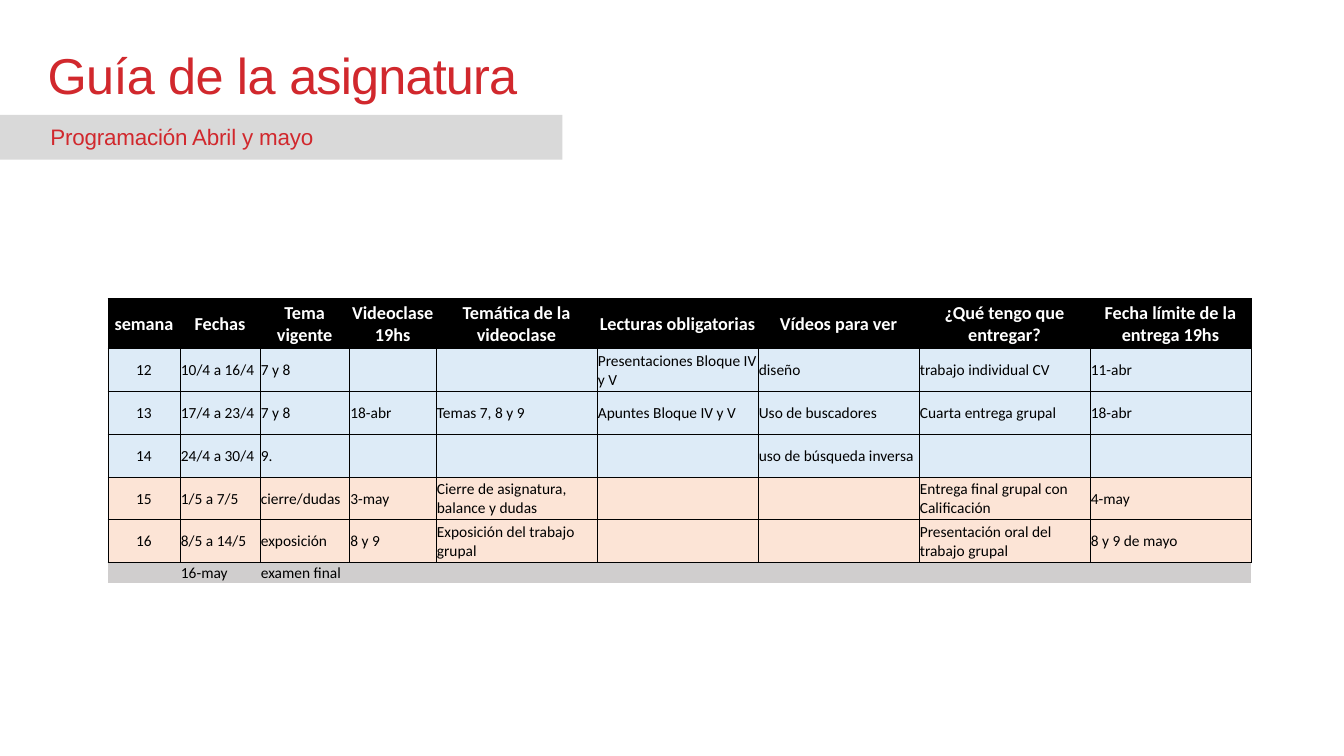
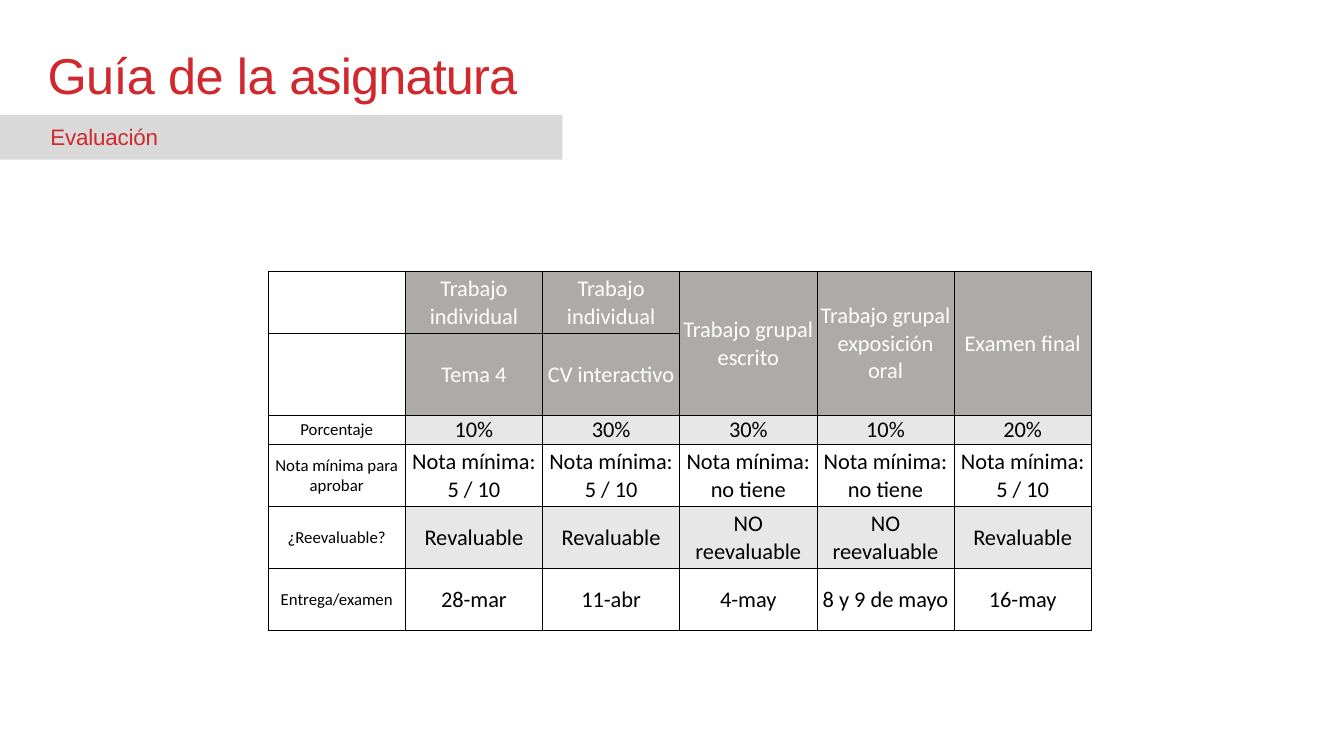
from lxml.etree import SubElement
from pptx import Presentation
from pptx.dml.color import RGBColor
from pptx.enum.shapes import MSO_SHAPE
from pptx.enum.text import MSO_ANCHOR, MSO_AUTO_SIZE, PP_ALIGN
from pptx.oxml.ns import qn
from pptx.util import Inches, Pt

COLORS = {
    "accent": "D1282D", "band": "D9D9D9", "black": "000000", "white": "FFFFFF",
    "blue": "DDEBF7", "peach": "FCE4D6", "closing": "D0CECE",
    "heading": "AEAAAA", "stripe": "E7E7E7",
}


class Deck:
    """Course guide style and current slide; lengths are percentages of the slide."""

    def __init__(self):
        self.presentation = Presentation()
        self.presentation.slide_width = Inches(13.33)
        self.presentation.slide_height = Inches(7.5)
        self.slide = None

    def across(self, share):
        return round(self.presentation.slide_width * share / 100)

    def down(self, share):
        return round(self.presentation.slide_height * share / 100)

    def box(self, left, top, width, height):
        return self.across(left), self.down(top), self.across(width), self.down(height)

    def add_run(self, paragraph, text, size, color, font="Calibri", bold=False, spacing=0):
        run = paragraph.add_run()
        run.text = text
        run.font.name = font
        run.font.size = Pt(size)
        run.font.bold = bold
        run.font.color.rgb = RGBColor.from_string(COLORS[color])
        if spacing:
            run._r.get_or_add_rPr().set("spc", str(round(spacing * 100)))

    def add_text(self, place, runs, size, anchor, space_before):
        frame = self.slide.shapes.add_textbox(*self.box(*place)).text_frame
        frame.word_wrap = True
        frame.auto_size = MSO_AUTO_SIZE.SHAPE_TO_FIT_TEXT
        frame.vertical_anchor = anchor
        frame.margin_left = frame.margin_right = frame.margin_bottom = 0
        frame.margin_top = Pt(1)
        paragraph = frame.paragraphs[0]
        paragraph.space_before = Pt(space_before)
        for text, spacing in runs:
            self.add_run(paragraph, text, size, "accent", "Arial", spacing=spacing)

    def add_band(self):
        band = self.slide.shapes.add_shape(MSO_SHAPE.RECTANGLE, *self.box(0, 15.2, 41.85, 5.93))
        band.shadow.inherit = False
        band.fill.solid()
        band.fill.fore_color.rgb = RGBColor.from_string(COLORS["band"])
        band.line.fill.background()

    def add_slide(self, subtitle, subtitle_width):
        self.slide = self.presentation.slides.add_slide(self.presentation.slide_layouts[6])
        title = [("Guía ", -0.5), ("de la ", -0.3), ("asignatura", -0.6)]
        self.add_text((3.55, 5.6, 37.2, 8.27), title, 36, MSO_ANCHOR.MIDDLE, 1)
        self.add_band()
        self.add_text((3.75, 16.1, subtitle_width, 3.73), [(subtitle, -0.1)], 16, MSO_ANCHOR.TOP, 0.9)

    def add_table(self, left, top, columns, rows, texts, style, merges=(), outer=0.5, open_last=False):
        place = self.box(left, top, sum(columns), sum(rows))
        table = self.slide.shapes.add_table(len(rows), len(columns), *place).table
        table.first_row = table.horz_banding = False
        for column, share in zip(table.columns, columns):
            column.width = self.across(share)
        for row, share in zip(table.rows, rows):
            row.height = self.down(share)
        for first, last in merges:
            table.cell(*first).merge(table.cell(*last))
        bottom, right = len(rows) - 1, len(columns) - 1
        for row, line in enumerate(texts):
            for column, text in enumerate(line):
                cell = table.cell(row, column)
                edges = {"L": column == 0, "R": column == right, "T": row == 0, "B": row == bottom}
                widths = {side: outer if edge else 0.5 for side, edge in edges.items()}
                if open_last and row == bottom:
                    widths.update(L=0, R=0, B=0)
                if cell.is_spanned:
                    widths["T"] = 0
                self.set_borders(cell, widths)
                self.fill_cell(cell, text, *style(row, column))

    def set_borders(self, cell, widths):
        properties = cell._tc.get_or_add_tcPr()
        for side, width in widths.items():
            line = SubElement(properties, qn(f"a:ln{side}"), w=str(Pt(width)))
            if width:
                SubElement(SubElement(line, qn("a:solidFill")), qn("a:srgbClr"), val=COLORS["black"])
            else:
                SubElement(line, qn("a:noFill"))

    def fill_cell(self, cell, text, fill, size, color, bold, align):
        if fill:
            cell.fill.solid()
            cell.fill.fore_color.rgb = RGBColor.from_string(COLORS[fill])
        else:
            cell.fill.background()
        cell.margin_left = cell.margin_right = cell.margin_top = Pt(0.7)
        cell.margin_bottom = 0
        cell.vertical_anchor = MSO_ANCHOR.MIDDLE
        paragraph = cell.text_frame.paragraphs[0]
        paragraph.alignment = align
        if text:
            self.add_run(paragraph, text, size, color, bold=bold)
        else:
            SubElement(paragraph._p, qn("a:endParaRPr"), sz=str(size * 100))


SCHEDULE = [
    ["semana", "Fechas", "Tema vigente", "Videoclase 19hs", "Temática de la videoclase",
     "Lecturas obligatorias", "Vídeos para ver", "¿Qué tengo que entregar?",
     "Fecha límite de la entrega 19hs"],
    ["12", "10/4 a 16/4", "7 y 8", "", "", "Presentaciones Bloque IV y V", "diseño",
     "trabajo individual CV", "11-abr"],
    ["13", "17/4 a 23/4", "7 y 8", "18-abr", "Temas 7, 8 y 9", "Apuntes Bloque IV y V",
     "Uso de buscadores", "Cuarta entrega grupal", "18-abr"],
    ["14", "24/4 a 30/4", "9.", "", "", "", "uso de búsqueda inversa", "", ""],
    ["15", "1/5 a 7/5", "cierre/dudas", "3-may", "Cierre de asignatura, balance y dudas", "", "",
     "Entrega final grupal con Calificación", "4-may"],
    ["16", "8/5 a 14/5", "exposición", "8 y 9", "Exposición del trabajo grupal", "", "",
     "Presentación oral del trabajo grupal", "8 y 9 de mayo"],
    ["", "16-may", "examen final", "", "", "", "", "", ""],
]

GRADING = [
    ["", "Trabajo individual", "Trabajo individual", "Trabajo grupal escrito",
     "Trabajo grupal exposición oral", "Examen final"],
    ["", "Tema 4", "CV interactivo", "", "", ""],
    ["Porcentaje", "10%", "30%", "30%", "10%", "20%"],
    ["Nota mínima para aprobar", "Nota mínima: 5 / 10", "Nota mínima: 5 / 10",
     "Nota mínima: no tiene", "Nota mínima: no tiene", "Nota mínima: 5 / 10"],
    ["¿Reevaluable?", "Revaluable", "Revaluable", "NO reevaluable", "NO reevaluable", "Revaluable"],
    ["Entrega/examen", "28-mar", "11-abr", "4-may", "8 y 9 de mayo", "16-may"],
]


def schedule_style(row, column):
    if row == 0:
        return "black", 13, "white", True, PP_ALIGN.CENTER
    fill = "blue" if row < 4 else "peach" if row < 6 else "closing"
    return fill, 11, "black", False, PP_ALIGN.LEFT if column else PP_ALIGN.CENTER


def grading_style(row, column):
    if column == 0:
        return None, 12, "black", False, PP_ALIGN.CENTER
    if row < 2:
        return "heading", 16, "white", False, PP_ALIGN.CENTER
    return None if row % 2 else "stripe", 16, "black", False, PP_ALIGN.CENTER


def main():
    deck = Deck()
    deck.add_slide("Programación Abril y mayo", 23.03)
    deck.add_table(8.03, 39.47, [5.36, 5.95, 6.66, 6.44] + [11.98] * 3 + [12.72, 11.98],
                   [6.67] + [5.65] * 5 + [2.8], SCHEDULE, schedule_style, open_last=True)
    deck.add_slide("Evaluación", 9.08)
    deck.add_table(19.95, 35.9, [10.21] * 6, [8.2, 8.2, 3.87, 8.2, 8.2, 8.27], GRADING,
                   grading_style, [((0, column), (1, column)) for column in (3, 4, 5)], outer=1)
    deck.presentation.save("out.pptx")


if __name__ == "__main__":
    main()
